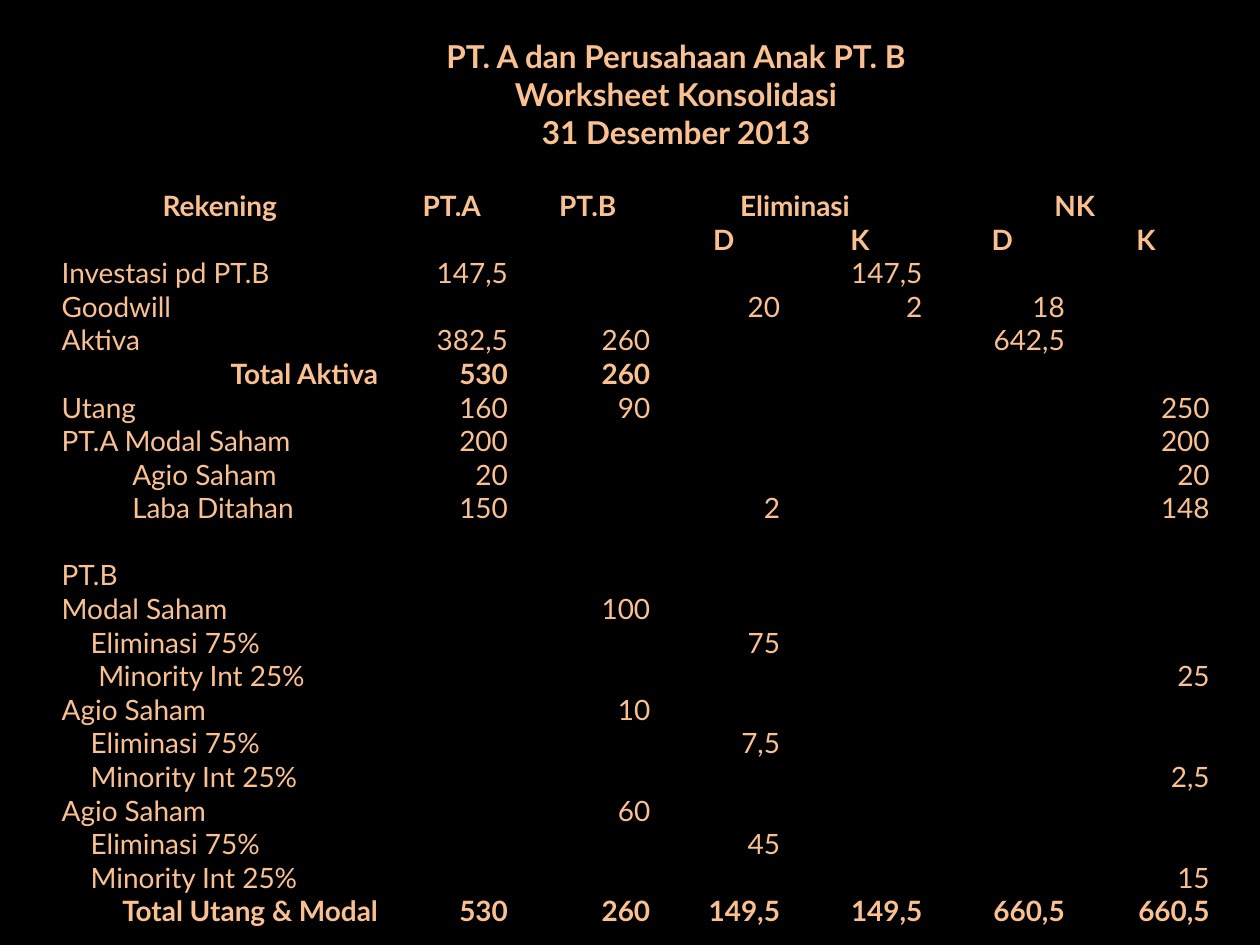
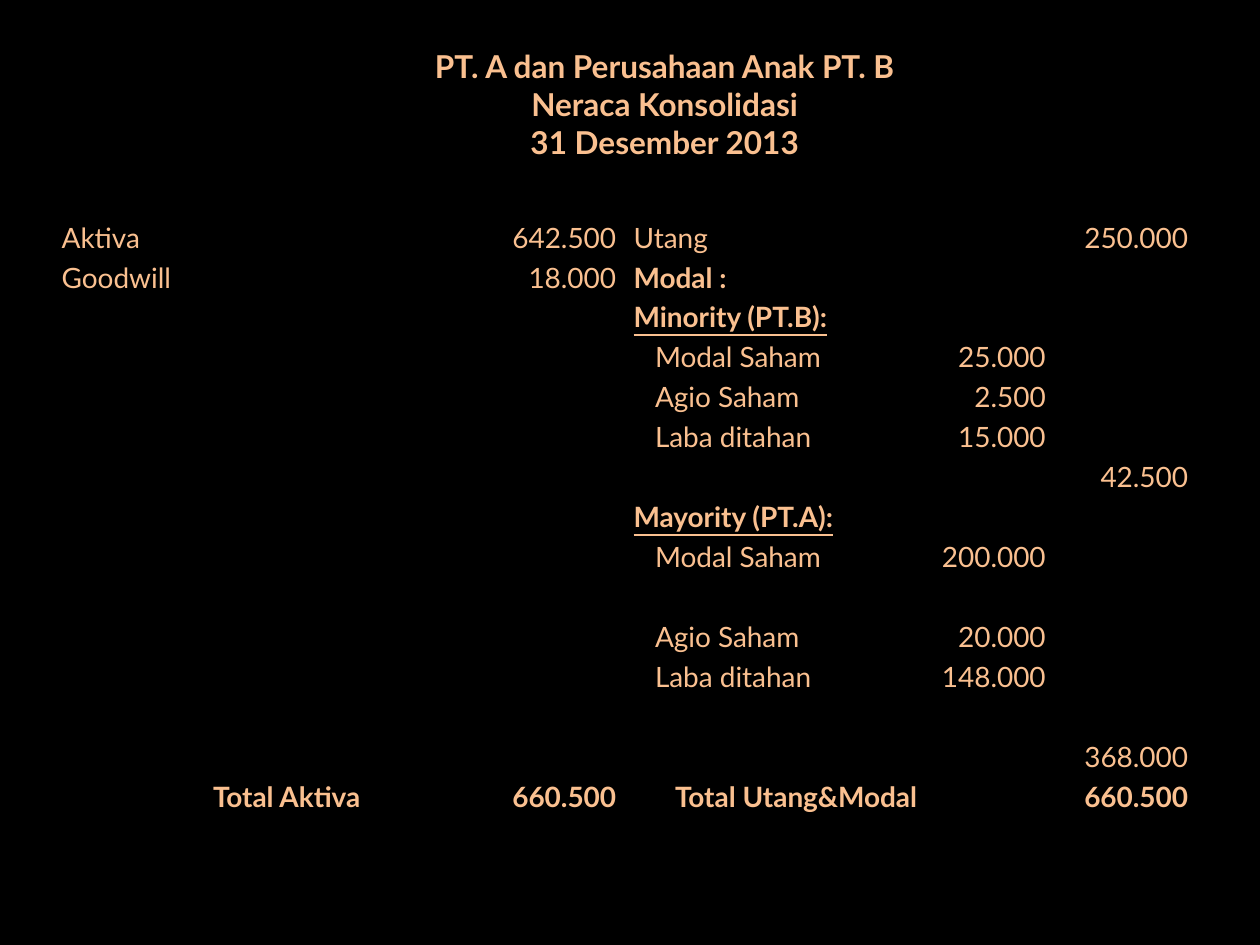
import pptx
import pptx.dml.color
import pptx.enum.shapes
import pptx.enum.text
import pptx.util
from pptx.util import Inches

FONT = "Lato"
PEACH = "FAC090"
BLACK = "000000"
PLAIN_TABLE = "{2D5ABB26-0587-4C30-8999-92F81FD0307C}"
ALIGN = pptx.enum.text.PP_ALIGN

WORKSHEET = [
    ("Rekening", "PT.A", "PT.B", "Eliminasi", "", "NK", ""),
    ("", "", "", "D", "K", "D", "K"),
    ("Investasi pd PT.B", "147,5", "", "", "147,5", "", ""),
    ("Goodwill", "", "", "20", "2", "18", ""),
    ("Aktiva", "382,5", "260", "", "", "642,5", ""),
    ("Total Aktiva", "530", "260", "", "", "", ""),
    ("Utang", "160", "90", "", "", "", "250"),
    ("PT.A Modal Saham", "200", "", "", "", "", "200"),
    ("Agio Saham", "20", "", "", "", "", "20"),
    ("Laba Ditahan", "150", "", "2", "", "", "148"),
    ("", "", "", "", "", "", ""),
    ("PT.B", "", "", "", "", "", ""),
    ("Modal Saham", "", "100", "", "", "", ""),
    ("Eliminasi 75%", "", "", "75", "", "", ""),
    ("Minority Int 25%", "", "", "", "", "", "25"),
    ("Agio Saham", "", "10", "", "", "", ""),
    ("Eliminasi 75%", "", "", "7,5", "", "", ""),
    ("Minority Int 25%", "", "", "", "", "", "2,5"),
    ("Agio Saham", "", "60", "", "", "", ""),
    ("Eliminasi 75%", "", "", "45", "", "", ""),
    ("Minority Int 25%", "", "", "", "", "", "15"),
    ("Total Utang & Modal", "530", "260", "149,5", "149,5", "660,5", "660,5"),
]
WORKSHEET_INDENTS = {8: 0.56, 9: 0.56, 13: 0.23, 14: 0.29, 16: 0.23,
                     17: 0.23, 19: 0.23, 20: 0.23}

BALANCE = [
    ("Aktiva", "", "642.500", "Utang", "", "250.000"),
    ("Goodwill", "", "18.000", "Modal :", "", ""),
    ("", "", "", "Minority (PT.B):", "", ""),
    ("", "", "", "Modal Saham", "25.000", ""),
    ("", "", "", "Agio Saham", "2.500", ""),
    ("", "", "", "Laba ditahan", "15.000", ""),
    ("", "", "", "", "", "42.500"),
    ("", "", "", "Mayority (PT.A):", "", ""),
    ("", "", "", "Modal Saham", "200.000", ""),
    ("", "", "", "Agio Saham", "20.000", ""),
    ("", "", "", "Laba ditahan", "148.000", ""),
    ("", "", "", "", "", "368.000"),
    ("Total Aktiva", "", "660.500", "Total Utang&Modal", "", "660.500"),
]
BALANCE_INDENTS = {row: 0.17 for row in (3, 4, 5, 8, 9, 10)}
BALANCE_TALL_ROWS = (8, 10, 12)


def color(hex_string):
    """Return the colour for a hex string."""
    return pptx.dml.color.RGBColor.from_string(hex_string)


def style_font(p, size, bold=False, underline=False):
    """Apply the shared typeface and colour to a paragraph."""
    p.font.name = FONT
    p.font.size = pptx.util.Pt(size)
    p.font.bold = bold
    p.font.underline = underline
    p.font.color.rgb = color(PEACH)


def add_backdrop(slide):
    """Cover the slide with black, behind its title."""
    sp = slide.shapes.add_shape(pptx.enum.shapes.MSO_SHAPE.RECTANGLE,
                                0, 0, Inches(10), Inches(7.75))
    sp.shadow.inherit = False
    sp.fill.solid()
    sp.fill.fore_color.rgb = color(BLACK)
    sp.line.color.rgb = color(BLACK)
    sp.line.width = pptx.util.Pt(2)
    slide.shapes.title._element.addprevious(sp._element)


def format_title(slide, lines, left, top):
    """Place the centred report heading in the title placeholder."""
    title = slide.shapes.title
    title.left, title.top = Inches(left), Inches(top)
    title.width, title.height = Inches(4.39), Inches(1.01)
    tf = title.text_frame
    tf.word_wrap = False
    tf.auto_size = pptx.enum.text.MSO_AUTO_SIZE.NONE
    tf.vertical_anchor = pptx.enum.text.MSO_ANCHOR.MIDDLE
    tf.text = "\n".join(lines)
    for p in tf.paragraphs:
        p.alignment = ALIGN.CENTER
        style_font(p, 18, bold=True)


def add_ledger(slide, left, top, widths, heights, rows, label_cols, indents,
               header_rows=0):
    """Add a plain table with labels at the left and amounts at the right."""
    frame = slide.shapes.add_table(len(rows), len(widths), Inches(left), Inches(top),
                                   Inches(sum(widths)), Inches(sum(heights)))
    table = frame.table
    table.first_row = table.horz_banding = False
    table._tbl.tblPr.find(pptx.oxml.ns.qn("a:tableStyleId")).text = PLAIN_TABLE
    for column, width in zip(table.columns, widths):
        column.width = Inches(width)
    for row, height in zip(table.rows, heights):
        row.height = Inches(height)
    for r, values in enumerate(rows):
        total = values[0].startswith("Total")
        for c, text in enumerate(values):
            cell = table.cell(r, c)
            cell.fill.background()
            cell.margin_left = cell.margin_right = Inches(0.07)
            cell.margin_top = cell.margin_bottom = 0
            p = cell.text_frame.paragraphs[0]
            p.text = text
            if r < header_rows:
                p.alignment = ALIGN.CENTER
            elif c in label_cols and not total:
                p.alignment = ALIGN.LEFT
            else:
                p.alignment = ALIGN.RIGHT
            if c == label_cols[-1]:
                cell.margin_left = Inches(0.07 + indents.get(r, 0))
            style_font(p, 16, bold=r < header_rows or total or text.endswith(":"),
                       underline=text.endswith("):"))
            if not text:
                p._p.get_or_add_endParaRPr().set("sz", "1600")
    return table


def add_report(prs, name, left, top):
    """Add a black slide headed by the name of the report."""
    slide = prs.slides.add_slide(prs.slide_layouts[5])
    add_backdrop(slide)
    format_title(slide, ["PT. A dan Perusahaan Anak PT. B", name,
                         "31 Desember 2013"], left, top)
    return slide


def worksheet_slide(prs):
    """Build the consolidation worksheet."""
    slide = add_report(prs, "Worksheet Konsolidasi", 3.17, 0.24)
    widths = [2.65, 1.03, 1.13, 1.03, 1.13, 1.13, 1.15]
    heights = [5.87 / len(WORKSHEET)] * len(WORKSHEET)
    table = add_ledger(slide, 0.42, 1.5, widths, heights, WORKSHEET, [0],
                       WORKSHEET_INDENTS, header_rows=2)
    for c in (3, 5):
        table.cell(0, c).merge(table.cell(0, c + 1))


def balance_slide(prs):
    """Build the consolidated balance sheet."""
    slide = add_report(prs, "Neraca Konsolidasi", 3.08, 0.32)
    widths = [2.51, 0.92, 1.11, 2.39, 1.02, 1.13]
    unit = 5.08 / (len(BALANCE) + len(BALANCE_TALL_ROWS))
    heights = [unit * (2 if r in BALANCE_TALL_ROWS else 1) for r in range(len(BALANCE))]
    add_ledger(slide, 0.42, 1.75, widths, heights, BALANCE, [0, 3], BALANCE_INDENTS)


def main():
    """Build and save both reports."""
    prs = pptx.Presentation()
    prs.slide_width, prs.slide_height = Inches(10), Inches(7.5)
    worksheet_slide(prs)
    balance_slide(prs)
    prs.save("out.pptx")


if __name__ == "__main__":
    main()
